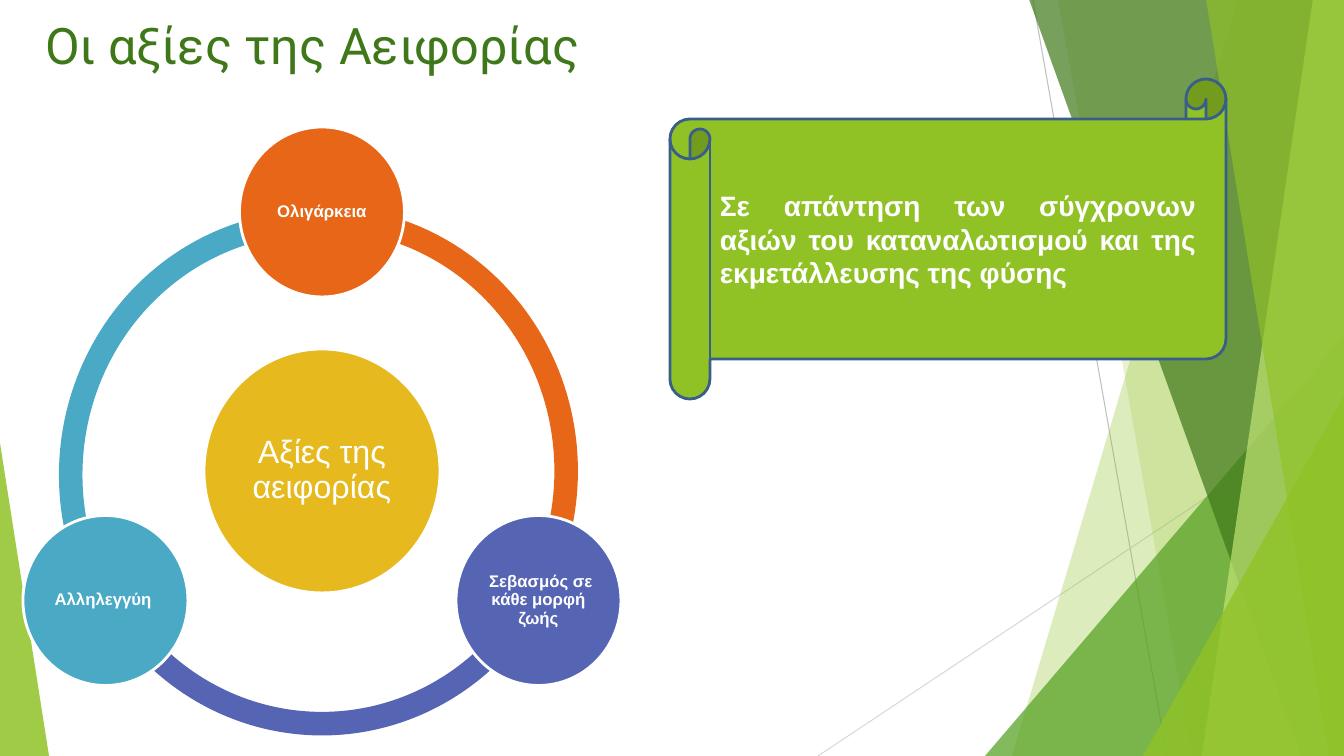
"""Build the slide on the values of sustainability with its ring diagram."""
import math

from lxml import etree
from pptx import Presentation
from pptx.dml.color import RGBColor
from pptx.enum.shapes import MSO_CONNECTOR, MSO_SHAPE
from pptx.enum.text import MSO_ANCHOR, PP_ALIGN
from pptx.oxml.ns import qn
from pptx.util import Pt

ELLIPSE, ARC = MSO_SHAPE.OVAL, MSO_SHAPE.BLOCK_ARC
TRIANGLE, SCROLL = MSO_SHAPE.ISOSCELES_TRIANGLE, MSO_SHAPE.HORIZONTAL_SCROLL
STRAIGHT = MSO_CONNECTOR.STRAIGHT
TOP, MIDDLE = MSO_ANCHOR.TOP, MSO_ANCHOR.MIDDLE
LEFT, CENTER, JUSTIFY = PP_ALIGN.LEFT, PP_ALIGN.CENTER, PP_ALIGN.JUSTIFY

WIDTH, HEIGHT = 1344, 756
SCALE = 12192000 / WIDTH
WHITE, LIME, DARK_GREEN = "FFFFFF", "90C226", "3F7819"

TITLE = "Οι αξίες της Αειφορίας"
SCROLL_TEXT = ("Σε απάντηση των σύγχρονων αξιών του καταναλωτισμού "
               "και της εκμετάλλευσης της φύσης")
HUB_TEXT = "Αξίες της αειφορίας"
# text, colour, angle of the circle, offset of the arc that starts there
VALUES = [
    ("Ολιγάρκεια", "E76618", 270, (0, 0)),
    (" Σεβασμός σε κάθε μορφή ζωής", "5665B3", 30, (0, 0)),
    ("Αλληλεγγύη ", "4AA9C5", 150, (-7, 4)),
]
HUB_CENTER = (322, 471)
HUB_SIZE, VALUE_SIZE, RING_SIZE = (236, 244), (165, 170), (512, 529)
ORBIT = (250, 259)
STEP = 120

LINES = [((1033, 0), (1167, 756), "BFBFBF"), ((1344, 406), (818, 756), "D9D9D9")]
# kind, geometry, colour, opacity in percent
FACETS = [
    ("band", (1238, 1012), LIME, 30),
    ("band", (1058, 1192), LIME, 20),
    ("triangle", (985, 336, 359, 420, 1), "54A021", 72),
    ("band", (1029, 1301), DARK_GREEN, 70),
    ("band", (1313, 1202), "C0E474", 70),
    ("band", (1206, 1329), LIME, 65),
    ("triangle", (1143, 396, 201, 360, 1), LIME, 80),
    ("triangle", (0, 443, 49, 313, 0), LIME, 85),
]


def px(length):
    return round(length * SCALE)


def color(value):
    return RGBColor.from_string(value)


def paint(shape, fill, opacity=100, line=None):
    shape.shadow.inherit = False
    shape.fill.solid()
    shape.fill.fore_color.rgb = color(fill)
    if opacity < 100:
        fill_color = shape.fill._xPr.find(qn("a:solidFill"))[0]
        etree.SubElement(fill_color, qn("a:alpha"), val=str(opacity * 1000))
    if line:
        shape.line.color.rgb = color(line)
        shape.line.width = Pt(2)
    else:
        shape.line.fill.background()


def add_shape(slide, kind, box, adjustments=()):
    shape = slide.shapes.add_shape(kind, *map(px, box))
    for index, value in enumerate(adjustments):
        shape.adjustments[index] = value
    return shape


def write(shape, text, size, font, text_color, align, anchor,
          bold=False, margins=(10, 5), spacing=None):
    frame = shape.text_frame
    frame.text = text
    frame.word_wrap = True
    frame.vertical_anchor = anchor
    frame.margin_left = frame.margin_right = px(margins[0])
    frame.margin_top = frame.margin_bottom = px(margins[1])
    paragraph = frame.paragraphs[0]
    paragraph.alignment = align
    paragraph.line_spacing = spacing
    style = paragraph.runs[0].font
    style.size, style.name, style.bold = Pt(size), font, bold
    style.color.rgb = color(text_color)


def centered(center, size):
    return (center[0] - size[0] / 2, center[1] - size[1] / 2, *size)


def add_backdrop(slide):
    for start, end, line_color in LINES:
        line = slide.shapes.add_connector(STRAIGHT, *map(px, start + end))
        line.line.color.rgb = color(line_color)
        line.line.width = Pt(0.75)
        etree.SubElement(line._element.spPr, qn("a:effectLst"))
    for kind, geometry, fill, opacity in FACETS:
        if kind == "band":
            top, bottom = geometry
            builder = slide.shapes.build_freeform(top, -1, scale=SCALE)
            builder.add_line_segments([(WIDTH, -1), (WIDTH, HEIGHT), (bottom, HEIGHT)])
            facet = builder.convert_to_shape()
        else:
            facet = add_shape(slide, TRIANGLE, geometry[:4], geometry[4:])
        paint(facet, fill, opacity)


def add_circle(slide, center, size, fill, text, text_size, bold, margin):
    circle = add_shape(slide, ELLIPSE, centered(center, size))
    paint(circle, fill, line=WHITE)
    write(circle, text, text_size, "Arial", WHITE, CENTER, MIDDLE,
          bold, (margin, margin), 0.9)


def add_ring(slide):
    x, y = HUB_CENTER
    for _, fill, angle, (shift_x, shift_y) in VALUES:
        box = centered((x + shift_x, y + shift_y), RING_SIZE)
        ends = [degrees % 360 * 0.6 for degrees in (angle, angle + STEP)]
        paint(add_shape(slide, ARC, box, (*ends, 0.046)), fill)
    add_circle(slide, HUB_CENTER, HUB_SIZE, "E6B91E", HUB_TEXT, 23, False, 3)
    for text, fill, angle, _ in VALUES:
        turn = math.radians(angle)
        center = (x + ORBIT[0] * math.cos(turn), y + ORBIT[1] * math.sin(turn))
        add_circle(slide, center, VALUE_SIZE, fill, text, 12, True, 2)


def main():
    presentation = Presentation()
    presentation.slide_width, presentation.slide_height = px(WIDTH), px(HEIGHT)
    slide = presentation.slides.add_slide(presentation.slide_layouts[5])
    add_backdrop(slide)
    title = slide.shapes.title
    title.left, title.top, title.width, title.height = map(px, (35, 9, 1239, 89))
    write(title, TITLE, 36, "Roboto", DARK_GREEN, LEFT, TOP)
    add_ring(slide)
    scroll = add_shape(slide, SCROLL, (670, 79, 556, 320), (0.125,))
    paint(scroll, LIME, line="395E89")
    write(scroll, SCROLL_TEXT, 20, "Arial", WHITE, JUSTIFY, MIDDLE, True)
    presentation.save("out.pptx")


if __name__ == "__main__":
    main()
